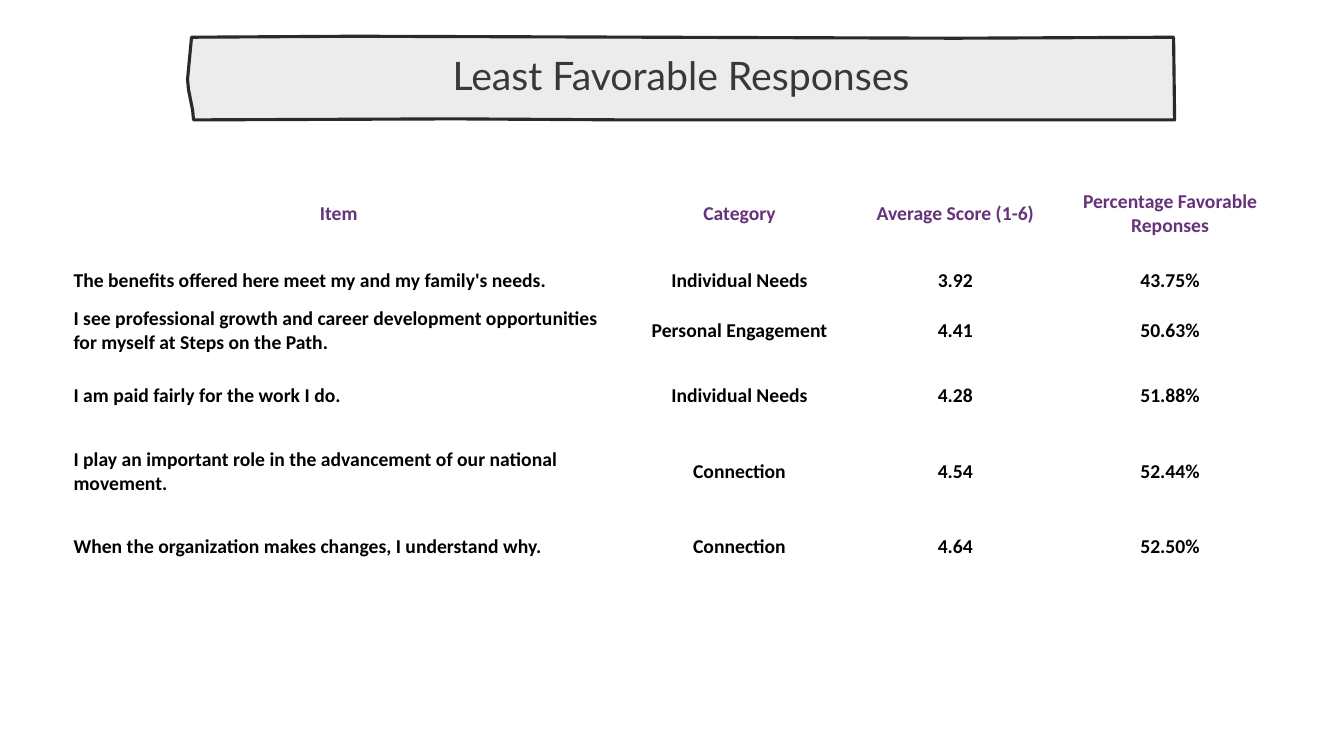
from pptx import Presentation
from pptx.dml.color import RGBColor
from pptx.enum.text import MSO_ANCHOR, MSO_AUTO_SIZE, PP_ALIGN
from pptx.util import Inches, Pt

TITLE = "Least Favorable Responses"
ROWS = [
    ("Item", "Category", "Average Score (1-6)", "Percentage Favorable Reponses"),
    ("The benefits offered here meet my and my family's needs.",
     "Individual Needs", "3.92", "43.75%"),
    ("I see professional growth and career development opportunities "
     "for myself at Steps on the Path.",
     "Personal Engagement", "4.41", "50.63%"),
    ("I am paid fairly for the work I do.", "Individual Needs", "4.28", "51.88%"),
    ("I play an important role in the advancement of our national movement.",
     "Connection", "4.54", "52.44%"),
    ("When the organization makes changes, I understand why.",
     "Connection", "4.64", "52.50%"),
    ("", "", "", ""),
]
WIDTHS = [5.6, 2.35, 1.93, 2.33]
HEIGHTS = [0.89, 0.45, 0.54, 0.75, 0.75, 0.73, 0.35]
OUTLINE = [(190, 37), (351, 36), (947, 38), (1164, 37), (1165, 119),
           (1016, 119), (621, 119), (450, 118), (192, 119), (191, 109),
           (189, 99), (187, 89), (186, 79)]
COLORS = {
    "paper": "FFFFFF", "head": "653379", "body": "000000",
    "banner": "ECECEC", "edge": "2B2A2B", "title": "393839",
}


def color(name):
    return RGBColor.from_string(COLORS[name])


def style(font, name, size, tint, bold):
    font.name = name
    font.size = Pt(size)
    font.bold = bold
    font.color.rgb = color(tint)


def add_banner(slide):
    pen = slide.shapes.build_freeform(*OUTLINE[0], scale=Inches(0.01))
    pen.add_line_segments(OUTLINE[1:], close=True)
    banner = pen.convert_to_shape()
    banner.shadow.inherit = False
    banner.fill.solid()
    banner.fill.fore_color.rgb = color("banner")
    banner.line.color.rgb = color("edge")
    banner.line.width = Pt(2.25)

    title = slide.shapes.title
    banner._element.addnext(title._element)
    title.left, title.top = banner.left, banner.top
    title.width, title.height = banner.width, banner.height
    frame = title.text_frame
    frame.text = TITLE
    frame.word_wrap = True
    frame.auto_size = MSO_AUTO_SIZE.NONE
    frame.vertical_anchor = MSO_ANCHOR.MIDDLE
    frame.margin_left = frame.margin_right = Inches(0.2)
    frame.margin_top = frame.margin_bottom = Inches(0.2)
    para = frame.paragraphs[0]
    para.alignment = PP_ALIGN.CENTER
    para.line_spacing = 0.9
    para.space_before = Pt(0)
    style(para.runs[0].font, "Lato", 28, "title", False)


def add_scores(slide):
    table = slide.shapes.add_table(
        len(ROWS), len(WIDTHS), Inches(0.56), Inches(1.67),
        Inches(sum(WIDTHS)), Inches(sum(HEIGHTS))).table
    for col, width in zip(table.columns, WIDTHS):
        col.width = Inches(width)
    for r, texts in enumerate(ROWS):
        table.rows[r].height = Inches(HEIGHTS[r])
        for c, text in enumerate(texts):
            item = r > 0 and c == 0
            cell = table.cell(r, c)
            cell.fill.solid()
            cell.fill.fore_color.rgb = color("paper")
            cell.vertical_anchor = MSO_ANCHOR.MIDDLE
            cell.margin_left = Inches(0.17 if item else 0.01)
            cell.margin_right = cell.margin_top = Inches(0.01)
            cell.margin_bottom = 0
            cell.text_frame.text = text
            para = cell.text_frame.paragraphs[0]
            para.alignment = PP_ALIGN.LEFT if item else PP_ALIGN.CENTER
            for run in para.runs:
                style(run.font, "Calibri", 14, "body" if r else "head", True)


def main():
    deck = Presentation()
    deck.slide_width, deck.slide_height = Inches(13.33), Inches(7.5)
    slide = deck.slides.add_slide(deck.slide_layouts[5])
    add_scores(slide)
    add_banner(slide)
    deck.save("out.pptx")


if __name__ == "__main__":
    main()
